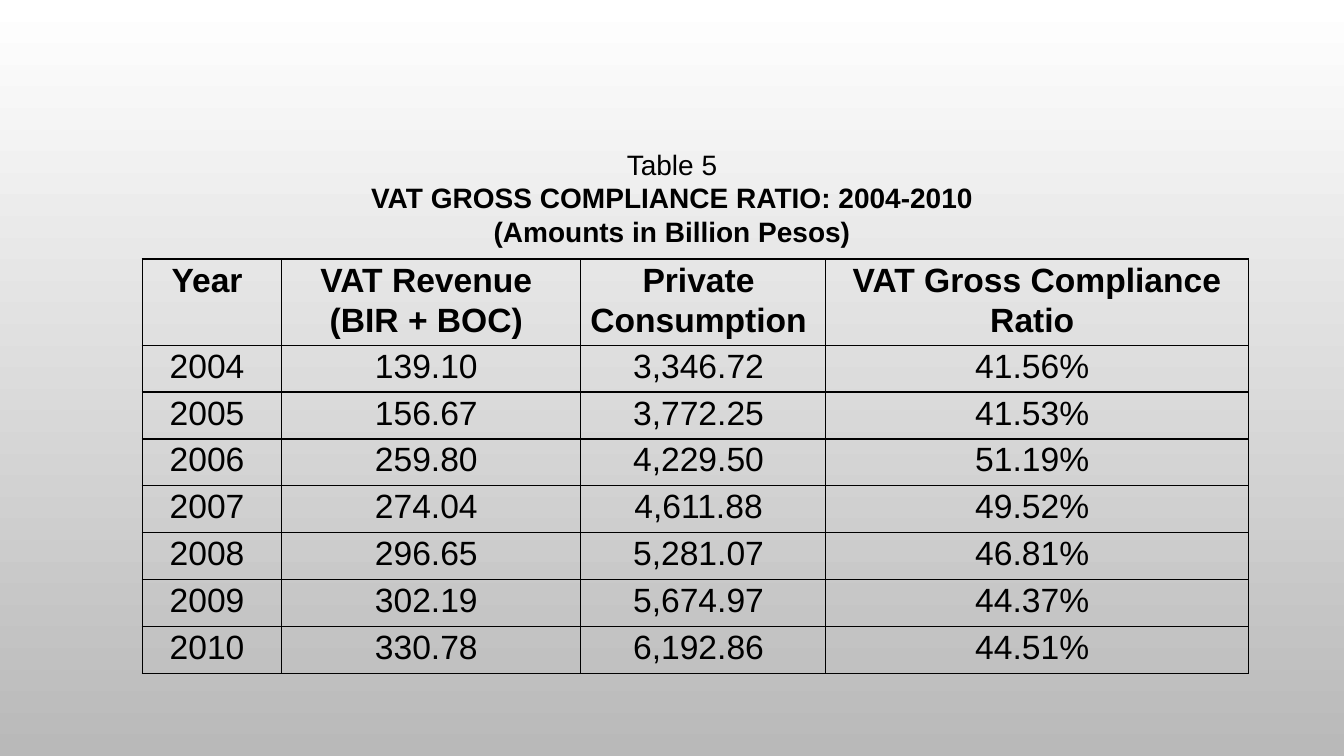
from pptx import Presentation
from pptx import util as u
from pptx.dml.color import RGBColor
from pptx.enum import text
from pptx.oxml import parse_xml
from pptx.oxml.ns import nsdecls

BLACK = RGBColor(0x00, 0x00, 0x00)
WHITE = RGBColor(0xFF, 0xFF, 0xFF)
GREY = RGBColor(0xB9, 0xB9, 0xB9)

CAPTION = [
    ("Table 5", False),
    ("VAT GROSS COMPLIANCE RATIO: 2004-2010", True),
    ("(Amounts in Billion Pesos)", True),
]
HEADER = [
    ["Year "],
    ["VAT Revenue ", "(BIR + BOC) "],
    ["Private ", "Consumption "],
    ["VAT Gross Compliance Ratio "],
]
RATIOS = [
    ("2004 ", "139.10 ", "3,346.72 ", "41.56% "),
    ("2005 ", "156.67 ", "3,772.25 ", "41.53% "),
    ("2006 ", "259.80 ", "4,229.50 ", "51.19% "),
    ("2007 ", "274.04 ", "4,611.88 ", "49.52% "),
    ("2008 ", "296.65 ", "5,281.07 ", "46.81% "),
    ("2009 ", "302.19 ", "5,674.97 ", "44.37% "),
    ("2010 ", "330.78 ", "6,192.86 ", "44.51% "),
]


class SlideBuilder:
    """Places elements on a grid of 100 columns by 100 rows."""

    font = "Arial"
    border_width = u.Pt(1)

    def __init__(self, presentation):
        self.column = presentation.slide_width / 100
        self.row = presentation.slide_height / 100
        self.slide = presentation.slides.add_slide(presentation.slide_layouts[6])

    def box(self, left, top, width, height):
        return (round(left * self.column), round(top * self.row),
                round(width * self.column), round(height * self.row))

    def background(self, top_color, bottom_color):
        fill = self.slide.background.fill
        fill.gradient()
        fill.gradient_angle = 270
        for stop, color, position in zip(fill.gradient_stops, (top_color, bottom_color), (0, 1)):
            stop.color.rgb = color
            stop.position = position

    def add_lines(self, frame, lines, size, spacing=None):
        """Fill a text frame with centred (words, bold) lines."""
        for index, (words, bold) in enumerate(lines):
            paragraph = frame.add_paragraph() if index else frame.paragraphs[0]
            paragraph.alignment = text.PP_ALIGN.CENTER
            paragraph.line_spacing = spacing
            run = paragraph.add_run()
            run.text = words
            run.font.name = self.font
            run.font.size = u.Pt(size)
            run.font.bold = bold
            run.font.color.rgb = BLACK

    def textbox(self, lines, size, *place):
        frame = self.slide.shapes.add_textbox(*self.box(*place)).text_frame
        frame.word_wrap = True
        frame.auto_size = text.MSO_AUTO_SIZE.SHAPE_TO_FIT_TEXT
        self.add_lines(frame, lines, size)

    def border(self, cell):
        properties = cell._tc.get_or_add_tcPr()
        for index, side in enumerate(("lnL", "lnR", "lnT", "lnB")):
            properties.insert(index, parse_xml(
                f'<a:{side} {nsdecls("a")} w="{self.border_width}"><a:solidFill>'
                f'<a:srgbClr val="{BLACK}"/></a:solidFill></a:{side}>'))

    def table(self, cells, size, left, top, widths, heights):
        place = self.box(left, top, sum(widths), sum(heights))
        table = self.slide.shapes.add_table(len(heights), len(widths), *place).table
        table.first_row = table.horz_banding = False
        for column, width in zip(table.columns, widths):
            column.width = round(width * self.column)
        for row, height, contents in zip(table.rows, heights, cells):
            row.height = round(height * self.row)
            for cell, lines in zip(row.cells, contents):
                cell.margin_left = cell.margin_right = u.Inches(0.07)
                cell.margin_top = cell.margin_bottom = 0
                cell.fill.background()
                self.border(cell)
                self.add_lines(cell.text_frame, lines, size, spacing=1.07)


def main():
    presentation = Presentation()
    presentation.slide_width = u.Inches(13.33)
    presentation.slide_height = u.Inches(7.5)
    builder = SlideBuilder(presentation)
    builder.background(WHITE, GREY)

    # Compliance table: bold header row, then one row per year
    cells = [[[(line, True) for line in lines] for lines in HEADER]]
    cells += [[[(value, False)] for value in year] for year in RATIOS]
    builder.table(cells, 24, 10.58, 34.27,
                  widths=[10.35, 22.28, 18.23, 31.43],
                  heights=[11.4] + [6.2] * len(RATIOS))

    # Caption above the table
    builder.textbox(CAPTION, 20, 25, 18.8, 50, 14.8)

    presentation.save("out.pptx")


if __name__ == "__main__":
    main()
